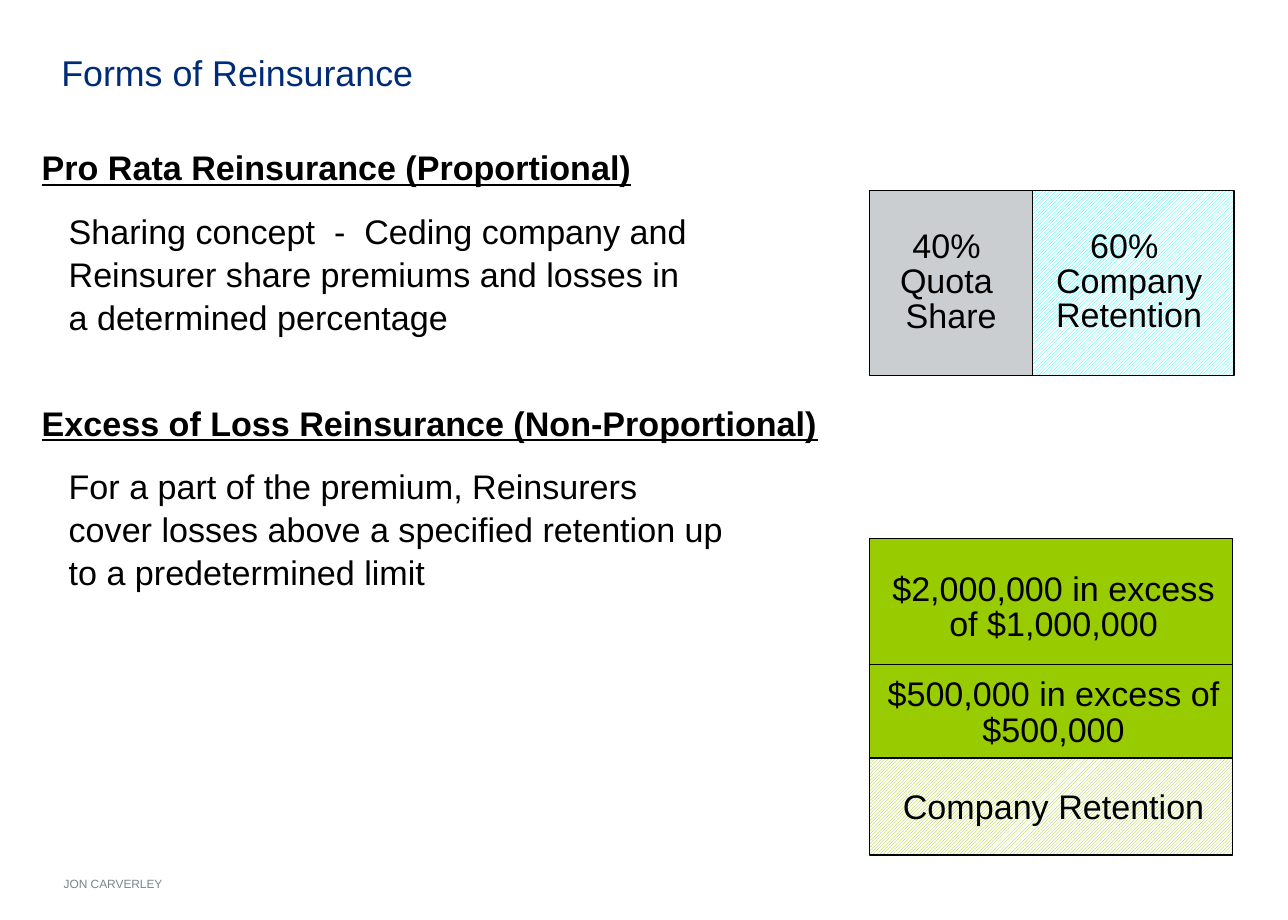
from pptx import Presentation
from pptx import util as u
from pptx.dml import color
from pptx.enum import dml, shapes, text

BLACK, WHITE, NAVY = "000000", "FFFFFF", "002C77"
GREY, SLATE, GREEN, CYAN = "CBCED0", "7C848A", "99CC00", "00FFFF"
PATTERN = dml.MSO_PATTERN
ANCHOR = text.MSO_ANCHOR
CENTER = text.PP_ALIGN.CENTER

FORMS = [
    ("Pro Rata Reinsurance (Proportional)",
     "Sharing concept  -  Ceding company and \n"
     "Reinsurer share premiums and losses in \n"
     "a determined percentage"),
    ("Excess of Loss Reinsurance (Non-Proportional)",
     "For a part of the premium, Reinsurers \n"
     "cover losses above a specified retention up\n"
     "to a predetermined limit"),
]
LAYERS = [
    ("$2,000,000 in excess of $1,000,000", 1.03, 0.16, None),
    ("$500,000 in excess of $500,000", 0.76, 0.09, None),
    ("Company Retention", 0.79, 0.09, PATTERN.DARK_UPWARD_DIAGONAL),
]


def rgb(value):
    return color.RGBColor.from_string(value)


def apply(target, values):
    for name, value in values.items():
        setattr(target, name, value)


def set_frame(frame, insets, **values):
    sides = ("margin_left", "margin_top", "margin_right", "margin_bottom")
    apply(frame, dict(zip(sides, map(u.Inches, insets))))
    apply(frame, {"word_wrap": True, **values})


def write(paragraph, words, size=20, shade=BLACK, font=None, **values):
    paragraph.text = words
    apply(paragraph, values)
    for run in paragraph.runs:
        apply(run.font, {"name": "Arial", "size": u.Pt(size), **(font or {})})
        run.font.color.rgb = rgb(shade)


def add_text(slide, box, insets=(0, 0, 0, 0), **values):
    frame = slide.shapes.add_textbox(*map(u.Inches, box)).text_frame
    set_frame(frame, insets, **values)
    return frame


def add_block(slide, box, words, shade, pattern=None, insets=(0.1, 0.05, 0.1, 0.05),
              spacing=0.86, wrap=True):
    block = slide.shapes.add_shape(shapes.MSO_SHAPE.RECTANGLE, *map(u.Inches, box))
    block.shadow.inherit = False
    if pattern:
        block.fill.patterned()
        block.fill.pattern = pattern
        block.fill.back_color.rgb = rgb(WHITE)
    else:
        block.fill.solid()
    block.fill.fore_color.rgb = rgb(shade)
    block.line.color.rgb = rgb(BLACK)
    block.line.width = u.Pt(0.75)
    set_frame(block.text_frame, insets, vertical_anchor=ANCHOR.MIDDLE, word_wrap=wrap)
    write(block.text_frame.paragraphs[0], words, alignment=CENTER, line_spacing=spacing)


def add_title(slide, box):
    frame = add_text(slide, box, (0, 0.05, 0.1, 0.05))
    write(frame.paragraphs[0], "Forms of Reinsurance", 21, NAVY, line_spacing=0.83)


def add_forms(slide, box):
    frame = add_text(slide, box)
    for index, (heading, detail) in enumerate(FORMS):
        paragraph = frame.add_paragraph() if index else frame.paragraphs[0]
        write(paragraph, heading, font={"bold": True, "underline": True},
              line_spacing=1.05, space_before=u.Pt(36 if index else 12))
        paragraph = frame.add_paragraph()
        write(paragraph, detail, line_spacing=1.05,
              space_before=u.Pt(12), space_after=u.Pt(1))
        paragraph._p.get_or_add_pPr().set("marL", str(u.Inches(0.22)))


def add_quota_share(slide, box):
    left, top, width, height = box
    share = 1.33
    retention = 1.71
    add_block(slide, (left + width - retention, top, retention, height),
              "60% \nCompany\nRetention", CYAN, PATTERN.LIGHT_UPWARD_DIAGONAL,
              spacing=0.85, wrap=False)
    add_block(slide, (left, top, share, height), "40% \nQuota \nShare", GREY, wrap=False)


def add_excess_layers(slide, box):
    left, top, width = box
    for words, height, inset, pattern in LAYERS:
        add_block(slide, (left, top, width, height), words, GREEN, pattern,
                  (0.11, inset, 0.07, 0.05))
        top += height


def add_footer(slide, box):
    frame = add_text(slide, box, vertical_anchor=ANCHOR.BOTTOM, word_wrap=False)
    write(frame.paragraphs[0], "JON CARVERLEY", 7, SLATE)


def main():
    presentation = Presentation()
    presentation.slide_width = u.Inches(10.5)
    presentation.slide_height = u.Inches(7.5)
    slide = presentation.slides.add_slide(presentation.slide_layouts[6])
    add_footer(slide, (0.52, 7.15, 3.16, 0.11))
    add_title(slide, (0.5, 0.42, 9.5, 0.76))
    add_forms(slide, (0.34, 1.18, 8.96, 5.48))
    add_quota_share(slide, (7.09, 1.55, 2.97, 1.51))
    add_excess_layers(slide, (7.09, 4.39, 2.96))
    presentation.save("out.pptx")


if __name__ == "__main__":
    main()
